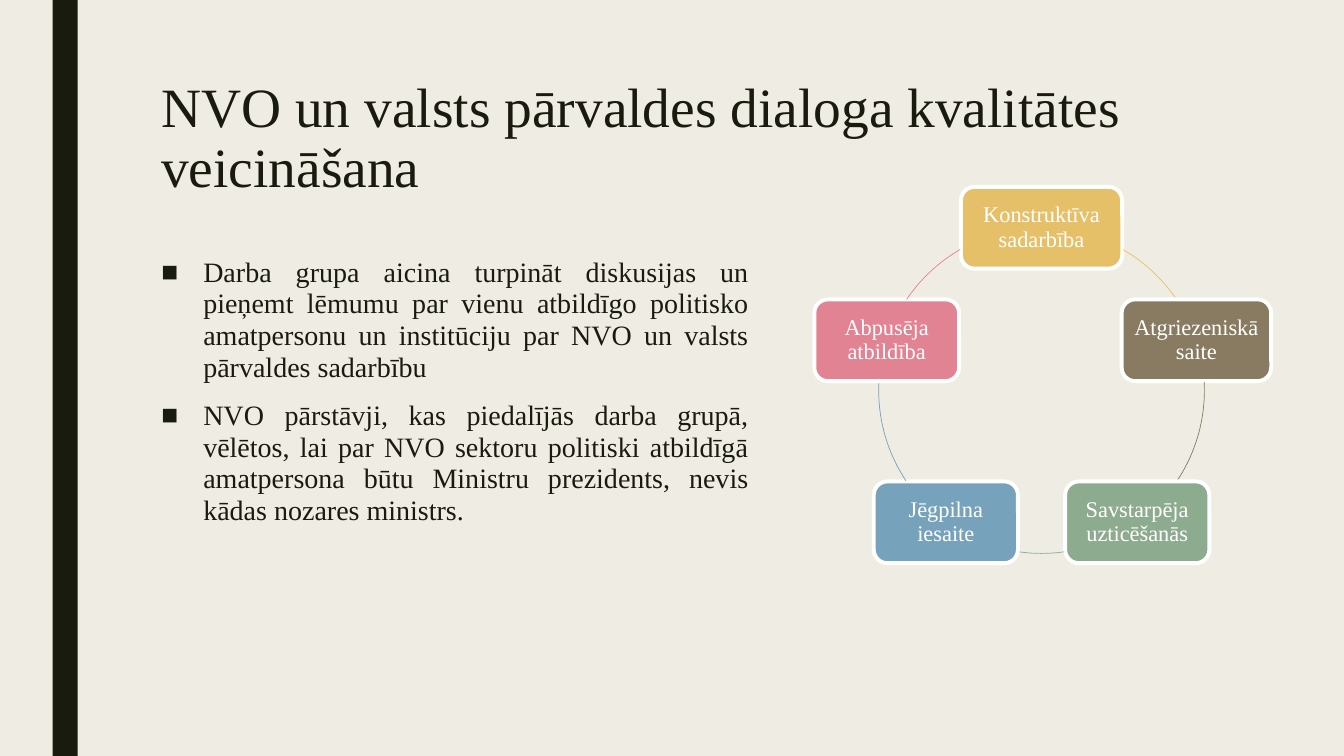
from math import cos, radians, sin

from lxml.etree import SubElement
from pptx import Presentation
from pptx.dml.color import RGBColor
from pptx.enum.shapes import MSO_SHAPE
from pptx.enum.text import MSO_ANCHOR, MSO_AUTO_SIZE, PP_ALIGN
from pptx.oxml.ns import qn
from pptx.util import Pt

# Content
TITLE = "NVO un valsts pārvaldes dialoga kvalitātes veicināšana"
POINTS = [
    "Darba grupa aicina turpināt diskusijas un pieņemt lēmumu par vienu atbildīgo "
    "politisko amatpersonu un institūciju par NVO un valsts pārvaldes sadarbību",
    "NVO pārstāvji, kas piedalījās darba grupā, vēlētos, lai par NVO sektoru politiski "
    "atbildīgā amatpersona būtu Ministru prezidents, nevis kādas nozares ministrs.",
]
# Clockwise from the top: label, colour, box width, arc to the next box (degrees)
CYCLE = [
    ("Konstruktīva sadarbība", "gold", 115.2, (300, 326)),
    ("Atgriezeniskā saite", "brown", 106.8, (357, 33.6)),
    ("Savstarpēja uzticēšanās", "green", 103, (82, 98)),
    ("Jēgpilna iesaite", "blue", 103, (146.4, 183)),
    ("Abpusēja atbildība", "pink", 103.4, (214, 240)),
]
COLORS = {
    "background": "EFEDE3", "ink": "191B0E", "white": "FFFFFF", "gold": "E6C069",
    "brown": "897B61", "green": "8DAB8E", "blue": "77A2BB", "pink": "E28394",
}
FONT = "Times New Roman"
CENTER_X, CENTER_Y, RADIUS = 744, 279, 116.3
BOX_HEIGHT = 58.4
BULLET_INDENT = 30


def color(name):
    return RGBColor.from_string(COLORS[name])


def place(shape, left, top, width, height):
    shape.left, shape.top = Pt(left), Pt(top)
    shape.width, shape.height = Pt(width), Pt(height)


def style(paragraph, size, ink, align, spacing):
    paragraph.font.name = FONT
    paragraph.font.size = Pt(size)
    paragraph.font.color.rgb = color(ink)
    paragraph.alignment = align
    paragraph.line_spacing = spacing


presentation = Presentation()
presentation.slide_width, presentation.slide_height = Pt(960), Pt(540)
slide = presentation.slides.add_slide(presentation.slide_layouts[1])
slide.background.fill.solid()
slide.background.fill.fore_color.rgb = color("background")

# Side bar
bar = slide.shapes.add_shape(MSO_SHAPE.RECTANGLE, Pt(37.5), 0, Pt(18), Pt(540))
bar.shadow.inherit = False
bar.fill.solid()
bar.fill.fore_color.rgb = color("ink")
bar.line.fill.background()

# Title and bullet list
title, body = slide.shapes.title, slide.placeholders[1]
place(title, 108, 54, 756, 100)
place(body, 108, 180, 434, 282)
for holder in (title, body):
    holder.text_frame.vertical_anchor = MSO_ANCHOR.TOP
    holder.text_frame.auto_size = MSO_AUTO_SIZE.NONE

title.text_frame.text = TITLE
style(title.text_frame.paragraphs[0], 39.6, "ink", PP_ALIGN.LEFT, 0.89)

body.text_frame.text = "\n".join(POINTS)
for point in body.text_frame.paragraphs:
    style(point, 20, "ink", PP_ALIGN.JUSTIFY, 0.94)
    point.space_before, point.space_after = Pt(10), Pt(2)
    properties = point._p.get_or_add_pPr()
    properties.set("marL", str(Pt(BULLET_INDENT)))
    properties.set("indent", str(-Pt(BULLET_INDENT)))
    SubElement(properties, qn("a:buFont"), typeface="Arial")
    SubElement(properties, qn("a:buChar"), char="■")

# Cycle of boxes joined by arcs
for index, (label, tint, width, angles) in enumerate(CYCLE):
    turn = radians(index * 360 / len(CYCLE) - 90)
    box = slide.shapes.add_shape(
        MSO_SHAPE.ROUNDED_RECTANGLE,
        Pt(CENTER_X + RADIUS * cos(turn) - width / 2),
        Pt(CENTER_Y + RADIUS * sin(turn) - BOX_HEIGHT / 2),
        Pt(width), Pt(BOX_HEIGHT))
    box.shadow.inherit = False
    box.fill.solid()
    box.fill.fore_color.rgb = color(tint)
    box.line.color.rgb = color("white")
    box.line.width = Pt(2.75)
    frame = box.text_frame
    frame.word_wrap = True
    frame.vertical_anchor = MSO_ANCHOR.MIDDLE
    frame.margin_left = frame.margin_right = Pt(5)
    frame.margin_top = frame.margin_bottom = Pt(5)
    frame.text = label
    style(frame.paragraphs[0], 16, "white", PP_ALIGN.CENTER, 0.9)

    arc = slide.shapes.add_shape(
        MSO_SHAPE.ARC, Pt(CENTER_X - RADIUS), Pt(CENTER_Y - RADIUS),
        Pt(2 * RADIUS), Pt(2 * RADIUS))
    arc.shadow.inherit = False
    # Adjustments count 60000ths of a degree in units of 100000
    for end, angle in enumerate(angles):
        arc.adjustments[end] = angle * 0.6
    arc.fill.background()
    arc.line.color.rgb = color(tint)
    arc.line.width = Pt(0.5)

presentation.save("out.pptx")
